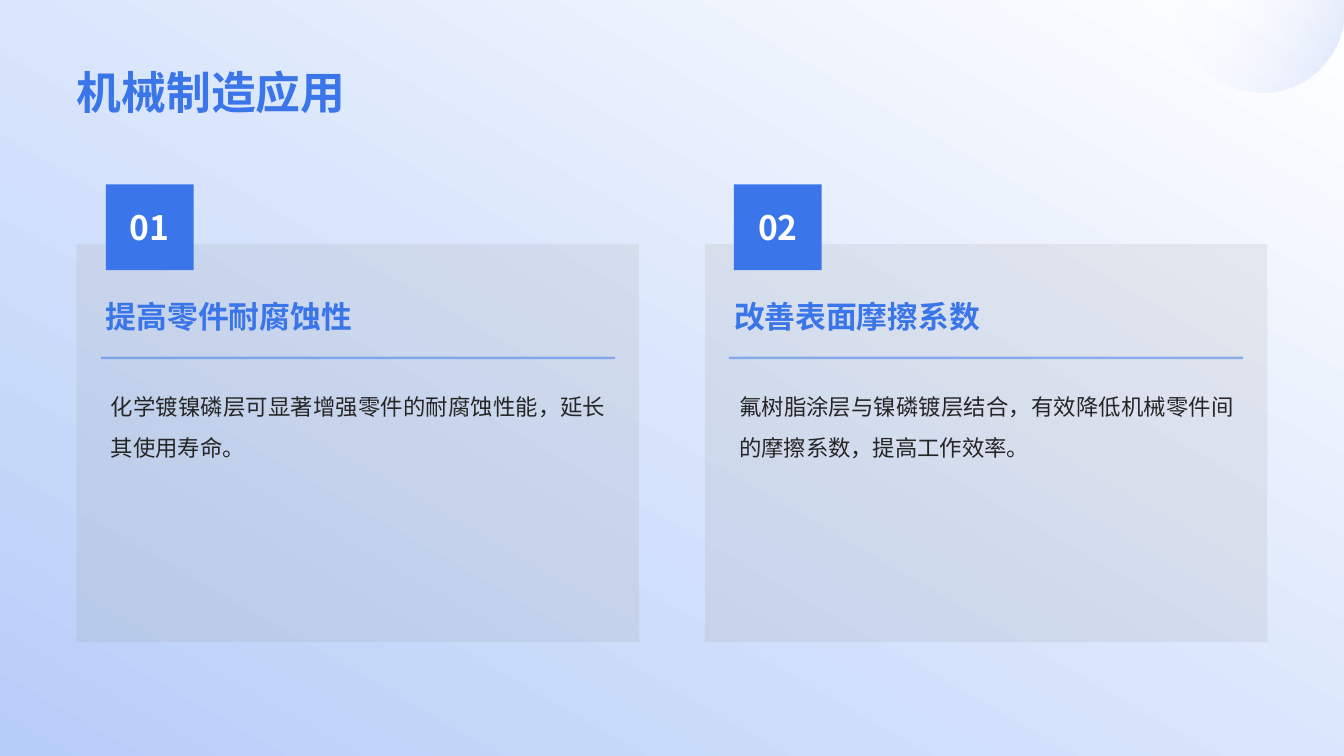
from math import cos, radians, sin

from lxml import etree
from pptx import Presentation
from pptx.dml.color import RGBColor
from pptx.enum.shapes import MSO_CONNECTOR, MSO_SHAPE
from pptx.enum.text import MSO_ANCHOR, PP_ALIGN
from pptx.oxml.ns import qn
from pptx.util import Inches, Pt

BLUE = RGBColor(0x3A, 0x76, 0xE9)
PALE_BLUE = RGBColor(0xB6, 0xCD, 0xF8)
WHITE = RGBColor(0xFF, 0xFF, 0xFF)
GRAY = RGBColor(0x99, 0x99, 0x99)
DARK = RGBColor(0x26, 0x26, 0x26)
FONT = "Noto Sans CJK SC"
RECTANGLE = MSO_SHAPE.RECTANGLE
STRAIGHT = MSO_CONNECTOR.STRAIGHT
LEFT, CENTER, JUSTIFY = PP_ALIGN.LEFT, PP_ALIGN.CENTER, PP_ALIGN.JUSTIFY
TOP, MIDDLE, BOTTOM = MSO_ANCHOR.TOP, MSO_ANCHOR.MIDDLE, MSO_ANCHOR.BOTTOM

SLIDE_WIDTH, SLIDE_HEIGHT = 13.33, 7.5
CARD_LEFT, CARD_TOP, CARD_WIDTH, CARD_HEIGHT = 0.76, 2.42, 5.58, 3.95
CARD_STEP = 6.23
CARDS = [
    ("01", "提高零件耐腐蚀性",
     "化学镀镍磷层可显著增强零件的耐腐蚀性能，延长其使用寿命。"),
    ("02", "改善表面摩擦系数",
     "氟树脂涂层与镍磷镀层结合，有效降低机械零件间的摩擦系数，提高工作效率。"),
]


def box(left, top, width, height):
    return [Inches(length) for length in (left, top, width, height)]


def set_opacity(element, percents):
    """Give the colours below element, in order, the listed opacities."""
    for color, percent in zip(element.iter(qn("a:srgbClr")), percents):
        etree.SubElement(color, qn("a:alpha"), val=str(percent * 1000))


def set_gradient(fill, start, end, angle):
    fill.gradient()
    fill.gradient_angle = angle
    for stop, color, position in zip(fill.gradient_stops, (start, end), (0, 1)):
        stop.color.rgb = color
        stop.position = position


def write_text(shape, text, size, color, bold=False, font=FONT, align=LEFT,
               anchor=TOP, spacing=1.0, wrap=True):
    frame = shape.text_frame
    frame.word_wrap = wrap
    frame.vertical_anchor = anchor
    frame.margin_left = frame.margin_right = 0
    frame.margin_top = frame.margin_bottom = 0
    paragraph = frame.paragraphs[0]
    paragraph.alignment = align
    paragraph.line_spacing = spacing
    run = paragraph.add_run()
    run.text = text
    run.font.size = Pt(size)
    run.font.bold = bold
    run.font.color.rgb = color
    run.font.name = font
    etree.SubElement(run.font._element, qn("a:ea"), typeface=FONT)


def add_rectangle(slide, bounds, color):
    shape = slide.shapes.add_shape(RECTANGLE, *bounds)
    shape.shadow.inherit = False
    shape.fill.solid()
    shape.fill.fore_color.rgb = color
    shape.line.fill.background()
    return shape


def add_corner_circle(slide, center_x, center_y, radius):
    """Draw a circle whose top is cut off by the slide's upper edge."""
    points = [(Inches(center_x + radius * cos(radians(angle))),
               Inches(max(0, center_y + radius * sin(radians(angle)))))
              for angle in range(-7, 188, 2)]
    builder = slide.shapes.build_freeform(*points[0])
    builder.add_line_segments(points[1:], close=True)
    circle = builder.convert_to_shape()
    circle.shadow.inherit = False
    circle.line.fill.background()
    set_gradient(circle.fill, BLUE, WHITE, 165)
    set_opacity(circle._element.spPr, (17, 0))


def add_divider(slide, left, top, width):
    divider = slide.shapes.add_connector(
        STRAIGHT, Inches(left), Inches(top), Inches(left + width), Inches(top))
    divider.line.color.rgb = BLUE
    divider.line.width = Pt(1.75)
    properties = divider._element.spPr
    set_opacity(properties, (50,))
    etree.SubElement(properties, qn("a:effectLst"))


def add_card(slide, left, top, width, height, number, heading, body):
    panel = add_rectangle(slide, box(left, top, width, height), GRAY)
    set_opacity(panel._element.spPr, (15,))
    body_box = slide.shapes.add_textbox(
        *box(left + 0.34, top + 1.35, width - 0.67, height - 1.55))
    write_text(body_box, body, 16, DARK, align=JUSTIFY, spacing=1.5)
    badge = add_rectangle(slide, box(left + 0.29, top - 0.59, 0.87, 0.85), BLUE)
    write_text(badge, number, 24, WHITE, bold=True, align=CENTER,
               anchor=MIDDLE, wrap=False)
    add_divider(slide, left + 0.24, top + 1.13, width - 0.48)
    heading_box = slide.shapes.add_textbox(
        *box(left + 0.29, top + 0.48, width - 0.67, 0.48))
    write_text(heading_box, heading, 22, BLUE, bold=True, anchor=MIDDLE)


def add_title(slide, text, left, top, width, height):
    title = slide.shapes.title
    title.left, title.top, title.width, title.height = box(left, top, width, height)
    write_text(title, text, 32, BLUE, bold=True, font="Arial", anchor=BOTTOM)


def main():
    presentation = Presentation()
    presentation.slide_width = Inches(SLIDE_WIDTH)
    presentation.slide_height = Inches(SLIDE_HEIGHT)
    slide = presentation.slides.add_slide(presentation.slide_layouts[5])
    set_gradient(slide.background.fill, PALE_BLUE, WHITE, 60)
    add_corner_circle(slide, 12.51, 0.1, 0.82)
    add_title(slide, "机械制造应用", CARD_LEFT, 0.39, 11.81, 0.79)
    for index, card in enumerate(CARDS):
        add_card(slide, CARD_LEFT + index * CARD_STEP, CARD_TOP,
                 CARD_WIDTH, CARD_HEIGHT, *card)
    presentation.save("out.pptx")


if __name__ == "__main__":
    main()
